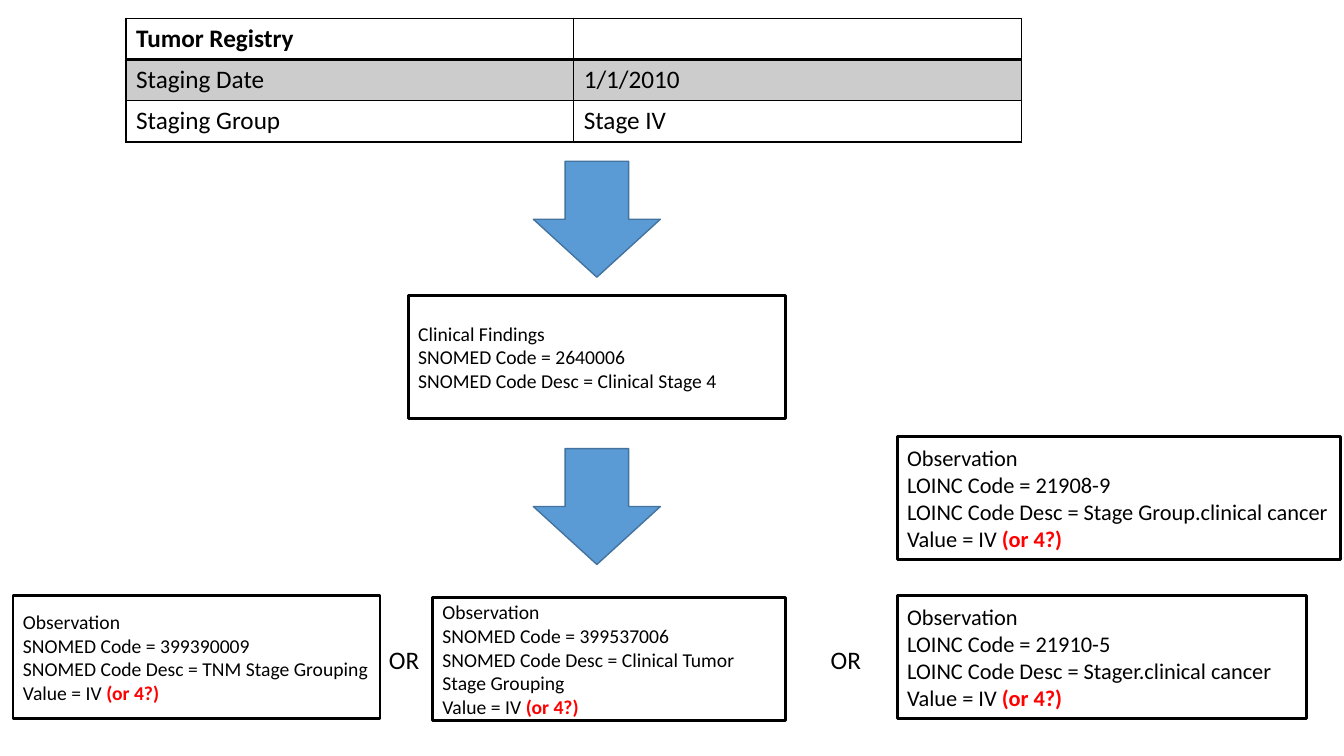
from pptx import Presentation
from pptx.dml.color import RGBColor
from pptx.enum.shapes import MSO_SHAPE
from pptx.enum.text import MSO_ANCHOR, PP_ALIGN
from pptx.util import Pt
from lxml.etree import SubElement
from pptx.oxml.ns import qn

# Content: positions are left, top, width, height in px
ROWS = [("Tumor Registry", ""), ("Staging Date", "1/1/2010"), ("Staging Group", "Stage IV")]
GRID = (125, 18, 888, 123)
ARROWS = [(529, 160, 126, 115), (529, 445, 126, 115)]
VALUE = ["Value = IV ", "(or 4?)"]  # the second part is the open question
BOXES = [
    ((405, 293, 374, 122), 14, [
        ["Clinical Findings"], ["SNOMED Code = 2640006"],
        ["SNOMED Code Desc = Clinical Stage 4"]]),
    ((13, 591, 364, 122), 14, [
        ["Observation"], ["SNOMED Code = 399390009"],
        ["SNOMED Code Desc = TNM Stage Grouping"], VALUE]),
    ((429, 593, 350, 122), 14, [
        ["Observation"], ["SNOMED Code = 399537006"],
        ["SNOMED Code Desc = Clinical Tumor Stage Grouping"], VALUE]),
    ((890, 433, 440, 122), 16, [
        ["Observation"], ["LOINC Code = 21908-9"],
        ["LOINC Code Desc = Stage Group.clinical cancer"], VALUE]),
    ((890, 591, 406, 122), 16, [
        ["Observation"], ["LOINC Code = 21910-5"],
        ["LOINC Code Desc = Stager.clinical cancer"], VALUE]),
]
ORS = [(376, 634, 50, 40), (814, 634, 50, 40)]
BLACK, WHITE, RED, GRAY = "000000", "FFFFFF", "FF0000", "CCCCCC"
BLUE, NAVY = "5B9BD5", "43739E"

SCALE = 9144  # EMU per px, 100 px to the inch


def px(*nums):
    return [n * SCALE for n in nums]


def color(code):
    return RGBColor.from_string(code)


def write(frame, lines, size=18, bold=False, anchor=MSO_ANCHOR.TOP, wrap=True):
    """Fill a frame; the second part of a line is bold red."""
    frame.word_wrap = wrap
    frame.vertical_anchor = anchor
    for i, parts in enumerate(lines):
        para = frame.paragraphs[0] if i == 0 else frame.add_paragraph()
        para.alignment = PP_ALIGN.LEFT
        for j, part in enumerate(parts):
            run = para.add_run()
            run.text = part
            font = run.font
            font.name, font.size = "Calibri", Pt(size)
            font.bold = bold or j > 0
            font.color.rgb = color(RED if j else BLACK)


def draw(kind, place, fill, line, width):
    shape = slide.shapes.add_shape(kind, *px(*place))
    shape.shadow.inherit = False
    shape.fill.solid()
    shape.fill.fore_color.rgb = color(fill)
    shape.line.color.rgb = color(line)
    shape.line.width = Pt(width)
    return shape


def border(cell, widths):
    """Draw the cell's sides; borders stand before the fill in tcPr."""
    props = cell._tc.get_or_add_tcPr()
    for i, (side, width) in enumerate(widths.items()):
        line = SubElement(props, qn("a:ln" + side), w=str(Pt(width)))
        fill = SubElement(line, qn("a:solidFill"))
        SubElement(fill, qn("a:srgbClr"), val=BLACK)
        props.insert(i, line)


deck = Presentation()
deck.slide_width, deck.slide_height = px(1333, 750)
slide = deck.slides.add_slide(deck.slide_layouts[6])

# Registry table, with a thick rule under its header
table = slide.shapes.add_table(len(ROWS), 2, *px(*GRID)).table
table.horz_banding = False
for r, row in enumerate(ROWS):
    for c, text in enumerate(row):
        cell = table.cell(r, c)
        cell.fill.solid()
        cell.fill.fore_color.rgb = color(GRAY if r == 1 else WHITE)
        border(cell, {"L": 1, "R": 1, "T": 2 if r == 1 else 1, "B": 2 if r == 0 else 1})
        if text:
            write(cell.text_frame, [[text]], bold=r == 0)

# Arrows between the levels
for place in ARROWS:
    draw(MSO_SHAPE.DOWN_ARROW, place, BLUE, NAVY, 1)

# Code boxes
for place, size, lines in BOXES:
    box = draw(MSO_SHAPE.RECTANGLE, place, WHITE, BLACK, 2)
    write(box.text_frame, lines, size=size, anchor=MSO_ANCHOR.MIDDLE)

# Alternatives
for place in ORS:
    label = slide.shapes.add_textbox(*px(*place))
    write(label.text_frame, [["OR"]], wrap=False)

deck.save("out.pptx")
